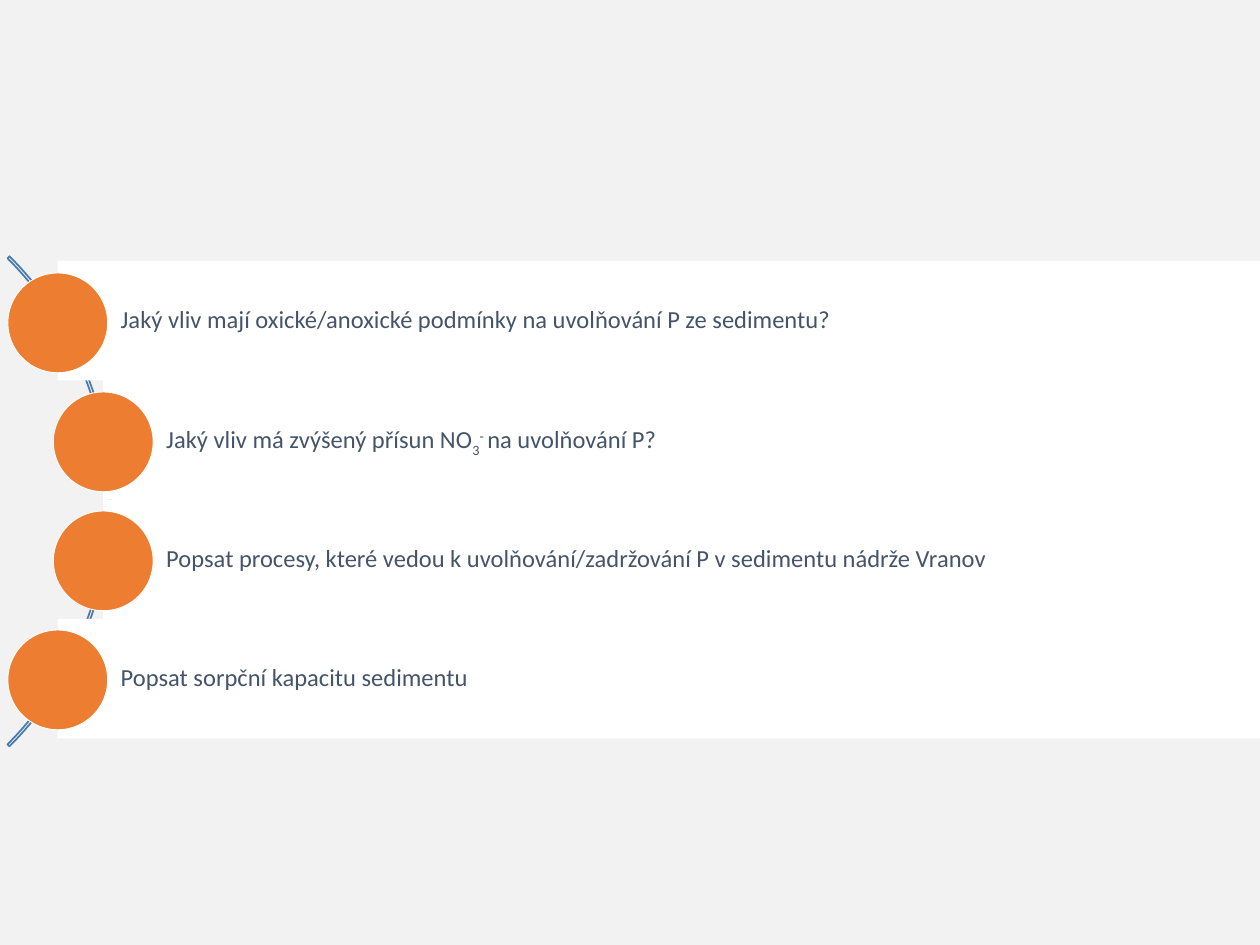
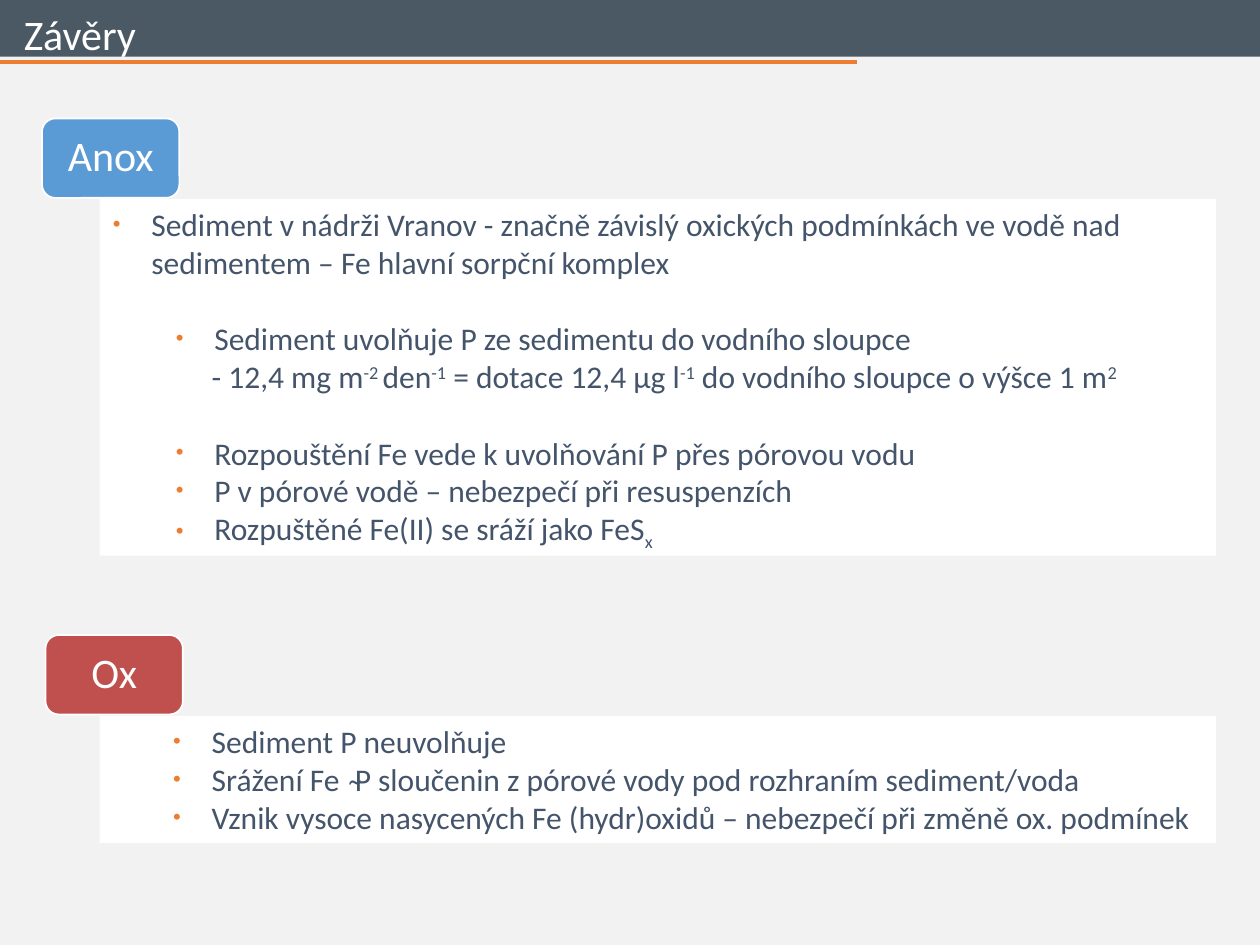
from lxml import etree
from pptx import Presentation
from pptx.dml.color import RGBColor
from pptx.enum.shapes import MSO_CONNECTOR, MSO_SHAPE
from pptx.enum.text import MSO_ANCHOR, PP_ALIGN
from pptx.oxml.ns import qn
from pptx.util import Pt

RECTANGLE = MSO_SHAPE.RECTANGLE
ROUNDED = MSO_SHAPE.ROUNDED_RECTANGLE
OVAL = MSO_SHAPE.OVAL
BLOCK_ARC = MSO_SHAPE.BLOCK_ARC
STRAIGHT = MSO_CONNECTOR.STRAIGHT
TOP, MIDDLE = MSO_ANCHOR.TOP, MSO_ANCHOR.MIDDLE
LEFT, CENTER = PP_ALIGN.LEFT, PP_ALIGN.CENTER

COLORS = {
    "background": "F2F2F2",
    "white": "FFFFFF",
    "text": "44546A",
    "orange": "ED7D31",
    "header": "4A5963",
    "arc": "497CAB",
    "anoxic": "5B9BD5",
    "oxic": "C0504D",
}
FONT = "Calibri"
SUBSCRIPT, SUPERSCRIPT = -25, 30
BLANK_LAYOUT = 6

QUESTIONS = [
    (33, ["Jaký vliv mají oxické/anoxické podmínky na uvolňování P ze sedimentu?"]),
    (59, ["Jaký vliv má zvýšený přísun NO", ("3", SUBSCRIPT),
          ("- ", SUPERSCRIPT), "na uvolňování P?"]),
    (59, ["Popsat procesy, které vedou k uvolňování/zadržování P v sedimentu nádrže Vranov"]),
    (33, ["Popsat sorpční kapacitu sedimentu"]),
]

# text parts, left margin, bulleted, space before
ANOXIC_POINTS = [
    (["Sediment v nádrži Vranov - značně závislý oxických podmínkách ve vodě nad "
      "sedimentem – Fe hlavní sorpční komplex"], 22.5, True, 0),
    (["Sediment uvolňuje P ze sedimentu do vodního sloupce"], 58.5, True, 22),
    (["- 12,4 mg m", ("-2 ", SUPERSCRIPT), "den", ("-1", SUPERSCRIPT),
      " = dotace 12,4 µg l", ("-1", SUPERSCRIPT),
      " do vodního sloupce o výšce 1 m", ("2", SUPERSCRIPT)], 57, False, 0),
    (["Rozpouštění Fe vede k uvolňování P přes pórovou vodu"], 58.5, True, 22),
    (["P v pórové vodě – nebezpečí při resuspenzích"], 58.5, True, 0),
    (["Rozpuštěné Fe(II) se sráží jako FeS", ("x", SUBSCRIPT)], 58.5, True, 0),
]
OXIC_POINTS = [
    ([line], 57, True, 0) for line in (
        "Sediment P neuvolňuje",
        "Srážení Fe  ̴P sloučenin z pórové vody pod rozhraním sediment/voda",
        "Vznik vysoce nasycených Fe (hydr)oxidů – nebezpečí při změně ox. podmínek",
    )
]


def rgb(name):
    return RGBColor.from_string(COLORS[name])


def add_slide(presentation):
    slide = presentation.slides.add_slide(presentation.slide_layouts[BLANK_LAYOUT])
    slide.background.fill.solid()
    slide.background.fill.fore_color.rgb = rgb("background")
    return slide


def add_box(slide, kind, left, top, width, height, fill=None, line=None, line_width=1):
    shape = slide.shapes.add_shape(kind, Pt(left), Pt(top), Pt(width), Pt(height))
    shape.shadow.inherit = False
    if fill:
        shape.fill.solid()
        shape.fill.fore_color.rgb = rgb(fill)
    else:
        shape.fill.background()
    if line:
        shape.line.color.rgb = rgb(line)
        shape.line.width = Pt(line_width)
    else:
        shape.line.fill.background()
    return shape


def set_frame(shape, anchor, left=7.2, top=3.6, right=7.2, bottom=3.6):
    frame = shape.text_frame
    frame.word_wrap = True
    frame.vertical_anchor = anchor
    frame.margin_left, frame.margin_top = Pt(left), Pt(top)
    frame.margin_right, frame.margin_bottom = Pt(right), Pt(bottom)
    return frame


def write(paragraph, parts, size, color="text", alignment=LEFT):
    for part in parts:
        text, baseline = (part, 0) if isinstance(part, str) else part
        run = paragraph.add_run()
        run.text = text
        if baseline:
            run._r.get_or_add_rPr().set("baseline", str(baseline * 1000))
    paragraph.alignment = alignment
    paragraph.font.name = FONT
    paragraph.font.size = Pt(size)
    paragraph.font.color.rgb = rgb(color)


def set_indent(paragraph, margin, bulleted):
    properties = paragraph._p.get_or_add_pPr()
    properties.set("marL", str(Pt(margin)))
    properties.set("indent", str(Pt(-22 if bulleted else 0)))
    if bulleted:
        color = etree.SubElement(properties, qn("a:buClr"))
        etree.SubElement(color, qn("a:srgbClr"), val=COLORS["orange"])
        etree.SubElement(properties, qn("a:buSzPct"), val="70000")
        etree.SubElement(properties, qn("a:buFont"), typeface="Arial")
        etree.SubElement(properties, qn("a:buChar"), char="•")


def add_question(slide, index, left, parts):
    top = 149 + 68.2 * index
    band = add_box(slide, RECTANGLE, left, top, 733.5 - left, 68.4, "white")
    paragraph = set_frame(band, MIDDLE, 36, 3, 3, 3).paragraphs[0]
    write(paragraph, parts, 14)
    paragraph.line_spacing = 0.9
    diameter = 57
    add_box(slide, OVAL, left - diameter / 2, 156 + 68 * index, diameter, diameter,
            "orange", "white", 0.5)


def add_header(slide, title):
    add_box(slide, RECTANGLE, 0, -0.5, 720, 33, "header")
    title_box = slide.shapes.add_textbox(Pt(6.5), Pt(1.5), Pt(544), Pt(36))
    write(set_frame(title_box, TOP).paragraphs[0], [title], 24, "white")
    rule = slide.shapes.add_connector(STRAIGHT, 0, Pt(35.3), Pt(490), Pt(35.3))
    rule.line.color.rgb = rgb("orange")
    rule.line.width = Pt(2)
    etree.SubElement(rule._element.spPr, qn("a:effectLst"))


def add_section(slide, label, color, left, top, panel_height, points):
    badge = add_box(slide, ROUNDED, left, top, 78.5, 45.4, color, "white")
    label_paragraph = set_frame(badge, MIDDLE).paragraphs[0]
    write(label_paragraph, [label], 24, "white", CENTER)
    label_paragraph.line_spacing = 0.9
    panel = add_box(slide, RECTANGLE, 56.9, top + 46.1, 638, panel_height, "white")
    frame = set_frame(panel, TOP)
    for index, (parts, margin, bulleted, space_before) in enumerate(points):
        paragraph = frame.add_paragraph() if index else frame.paragraphs[0]
        set_indent(paragraph, margin, bulleted)
        paragraph.space_before = Pt(space_before)
        write(paragraph, parts, 18)


def build_questions(presentation):
    slide = add_slide(presentation)
    arc = add_box(slide, BLOCK_ARC, -332.6, 88.5, 396, 396, line="arc")
    for index, value in enumerate((189, 27, 0.004)):
        arc.adjustments[index] = value
    for index, (left, parts) in enumerate(QUESTIONS):
        add_question(slide, index, left, parts)


def build_conclusions(presentation):
    slide = add_slide(presentation)
    add_header(slide, "Závěry")
    add_section(slide, "Anox", "anoxic", 24, 67.7, 203.8, ANOXIC_POINTS)
    add_section(slide, "Ox", "oxic", 26, 362.9, 72.7, OXIC_POINTS)


def main():
    presentation = Presentation()
    presentation.slide_width, presentation.slide_height = Pt(720), Pt(540)
    build_questions(presentation)
    build_conclusions(presentation)
    presentation.save("out.pptx")


if __name__ == "__main__":
    main()
